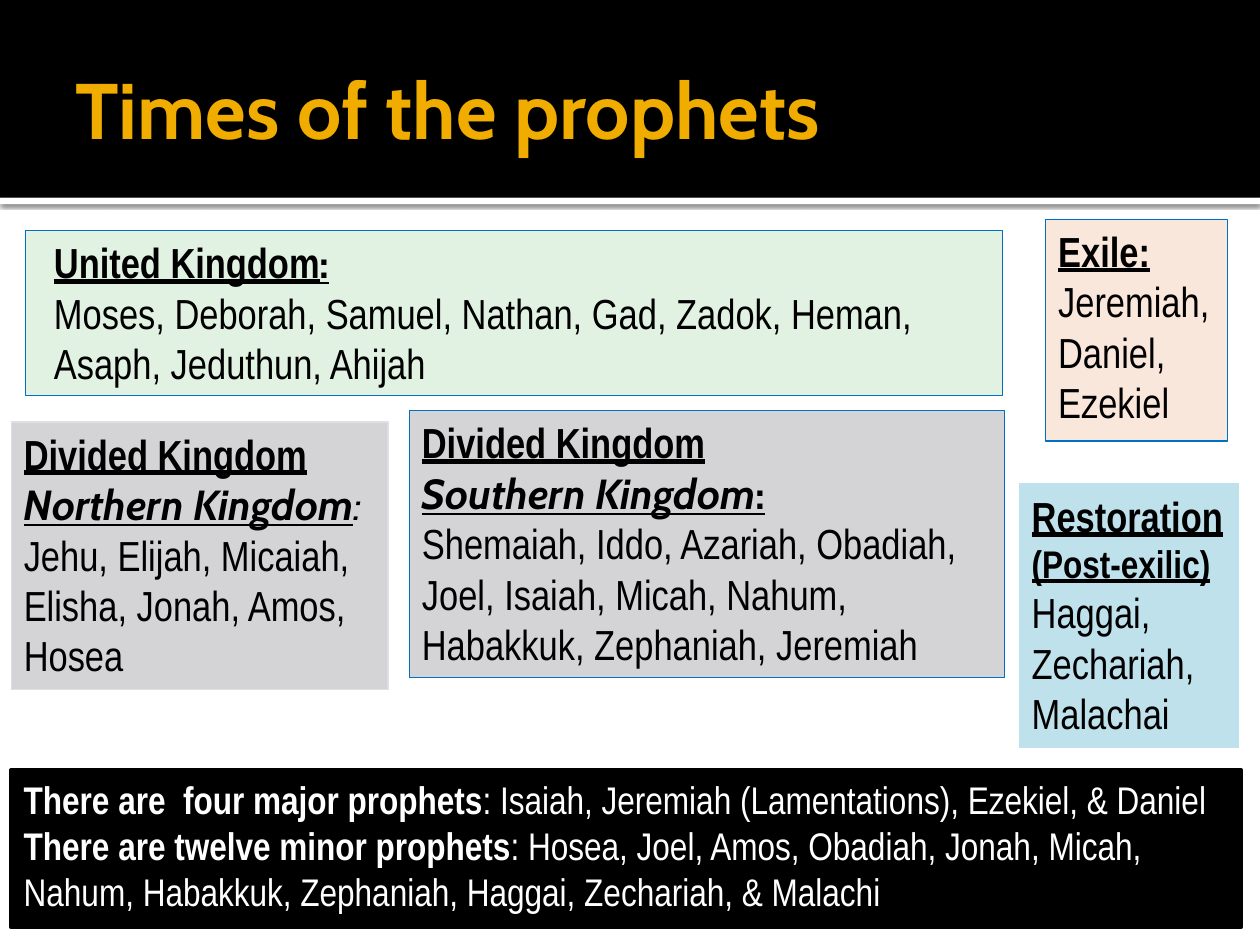
from dataclasses import dataclass

from lxml import etree
from pptx import Presentation
from pptx.dml.color import RGBColor
from pptx.enum import shapes, text
from pptx.oxml.ns import qn
from pptx.util import Inches, Pt

COLORS = {
    "black": "000000", "white": "FFFFFF", "gold": "F0AD00", "blue": "0070C0",
    "gray": "D4D4D6", "gray_line": "DDDFE5", "aqua": "BFE1EB",
    "peach": "FAE7DC", "green": "E1F1E2",
}
BODY, HEAD = "Arial Narrow", "Cabin"


@dataclass
class Run:
    text: str
    bold: bool = False
    underline: bool = False
    italic: bool = False
    font: str = BODY
    size: float = 24


@dataclass
class Box:
    at: tuple[float, float, float, float]
    fill: str
    line: str
    paragraphs: list[list[Run]]
    color: str = "black"
    line_width: float = 0.75
    indent: float = 0


def rgb(name: str) -> RGBColor:
    return RGBColor.from_string(COLORS[name])


def heading(words: str, size: float = 24) -> Run:
    return Run(words, bold=True, underline=True, size=size)


def kingdom(words: str) -> Run:
    return Run(words, bold=True, underline=True, italic=True, font=HEAD)


def add_run(p, run: Run, color: str) -> None:
    r = p.add_run()
    r.text = run.text
    r.font.name, r.font.size = run.font, Pt(run.size)
    r.font.bold, r.font.italic = run.bold, run.italic
    r.font.underline = run.underline
    r.font.color.rgb = rgb(color)


def add_rect(slide, at: tuple[float, float, float, float], fill: str):
    sp = slide.shapes.add_shape(shapes.MSO_SHAPE.RECTANGLE, *map(Inches, at))
    sp.shadow.inherit = False
    sp.fill.solid()
    sp.fill.fore_color.rgb = rgb(fill)
    sp.line.fill.background()
    return sp


def add_soft_shadow(sp) -> None:
    effects = sp._element.spPr.find(qn("a:effectLst"))
    shadow = etree.SubElement(effects, qn("a:outerShdw"), blurRad=str(Pt(2.5)),
                              dist=str(Pt(0.8)), dir="5400000", rotWithShape="0")
    color = etree.SubElement(shadow, qn("a:srgbClr"), val=COLORS["black"])
    etree.SubElement(color, qn("a:alpha"), val="60000")


def add_box(slide, box: Box) -> None:
    sp = add_rect(slide, box.at, box.fill)
    sp.line.color.rgb = rgb(box.line)
    sp.line.width = Pt(box.line_width)
    tf = sp.text_frame
    tf.word_wrap = True
    tf.auto_size = text.MSO_AUTO_SIZE.SHAPE_TO_FIT_TEXT
    tf.vertical_anchor = text.MSO_ANCHOR.TOP
    for i, runs in enumerate(box.paragraphs):
        p = tf.add_paragraph() if i else tf.paragraphs[0]
        p.alignment = text.PP_ALIGN.LEFT
        if box.indent:
            p._p.get_or_add_pPr().set("marL", str(Inches(box.indent)))
        for run in runs:
            add_run(p, run, box.color)


def add_header(slide, words: str) -> None:
    add_soft_shadow(add_rect(slide, (0, 1.57, 10, 0.05), "white"))
    add_rect(slide, (0, 0, 10, 1.57), "black")
    title = slide.shapes.title
    slide.shapes._spTree.append(title._element)  # bring in front of the band
    title.left, title.top, title.width, title.height = map(
        Inches, (0.5, 0.17, 9, 1.37))
    tf = title.text_frame
    tf.word_wrap = True
    tf.vertical_anchor = text.MSO_ANCHOR.MIDDLE
    tf.margin_left = Inches(0.1)
    tf.margin_right = tf.margin_top = tf.margin_bottom = Inches(0.05)
    p = tf.paragraphs[0]
    p.alignment = text.PP_ALIGN.LEFT
    add_run(p, Run(words, bold=True, font=HEAD, size=45), "gold")


BOXES = [
    # Divided kingdom, north and south
    Box((0.09, 3.35, 2.99, 2.12), "gray", "gray_line", [
        [heading("Divided Kingdom")],
        [kingdom("Northern Kingdom"), Run(":", italic=True, font=HEAD)],
        [Run("Jehu, Elijah, Micaiah,")],
        [Run("Elisha, Jonah, Amos,")],
        [Run("Hosea")],
    ]),
    Box((3.25, 3.26, 4.72, 2.12), "gray", "blue", [
        [heading("Divided Kingdom")],
        [kingdom("Southern Kingdom"),
         Run(":", bold=True, underline=True, font=HEAD)],
        [Run("Shemaiah, Iddo, Azariah, Obadiah, Joel, Isaiah, Micah, Nahum, "
             "Habakkuk, Zephaniah, Jeremiah")],
    ]),
    # Restoration and exile
    Box((8.09, 3.84, 1.74, 2.09), "aqua", "aqua", [
        [heading("Restoration"), heading("(Post-exilic)", 22)],
        [Run("Haggai, Zechariah, Malachai")],
    ]),
    Box((8.3, 1.74, 1.44, 1.76), "peach", "blue", [
        [heading("Exile:")],
        [Run("Jeremiah, Daniel, Ezekiel")],
    ]),
    # United kingdom
    Box((0.2, 1.83, 7.76, 1.31), "green", "blue", [
        [heading("United Kingdom"),
         Run(":", bold=True, underline=True, font=HEAD)],
        [Run("Moses, Deborah, Samuel, Nathan, Gad, Zadok, Heman, Asaph, "
             "Jeduthun, Ahijah")],
    ], indent=0.13),
    # Major and minor prophets
    Box((0.09, 6.11, 9.76, 1.25), "black", "black", [
        [Run("There are  four major prophets", bold=True, size=22),
         Run(": Isaiah, Jeremiah (Lamentations), Ezekiel, & Daniel", size=22)],
        [Run("There are twelve minor prophets", bold=True, size=22),
         Run(": Hosea, Joel, Amos, Obadiah, Jonah, Micah, Nahum, Habakkuk, "
             "Zephaniah, Haggai, Zechariah, & Malachi", size=22)],
    ], color="white", line_width=2.25),
]


def main() -> None:
    prs = Presentation()
    prs.slide_width, prs.slide_height = Inches(10), Inches(7.5)
    slide = prs.slides.add_slide(prs.slide_layouts[5])
    slide.background.fill.solid()
    slide.background.fill.fore_color.rgb = rgb("white")
    add_header(slide, "Times of the prophets")
    for box in BOXES:
        add_box(slide, box)
    prs.save("out.pptx")


if __name__ == "__main__":
    main()
